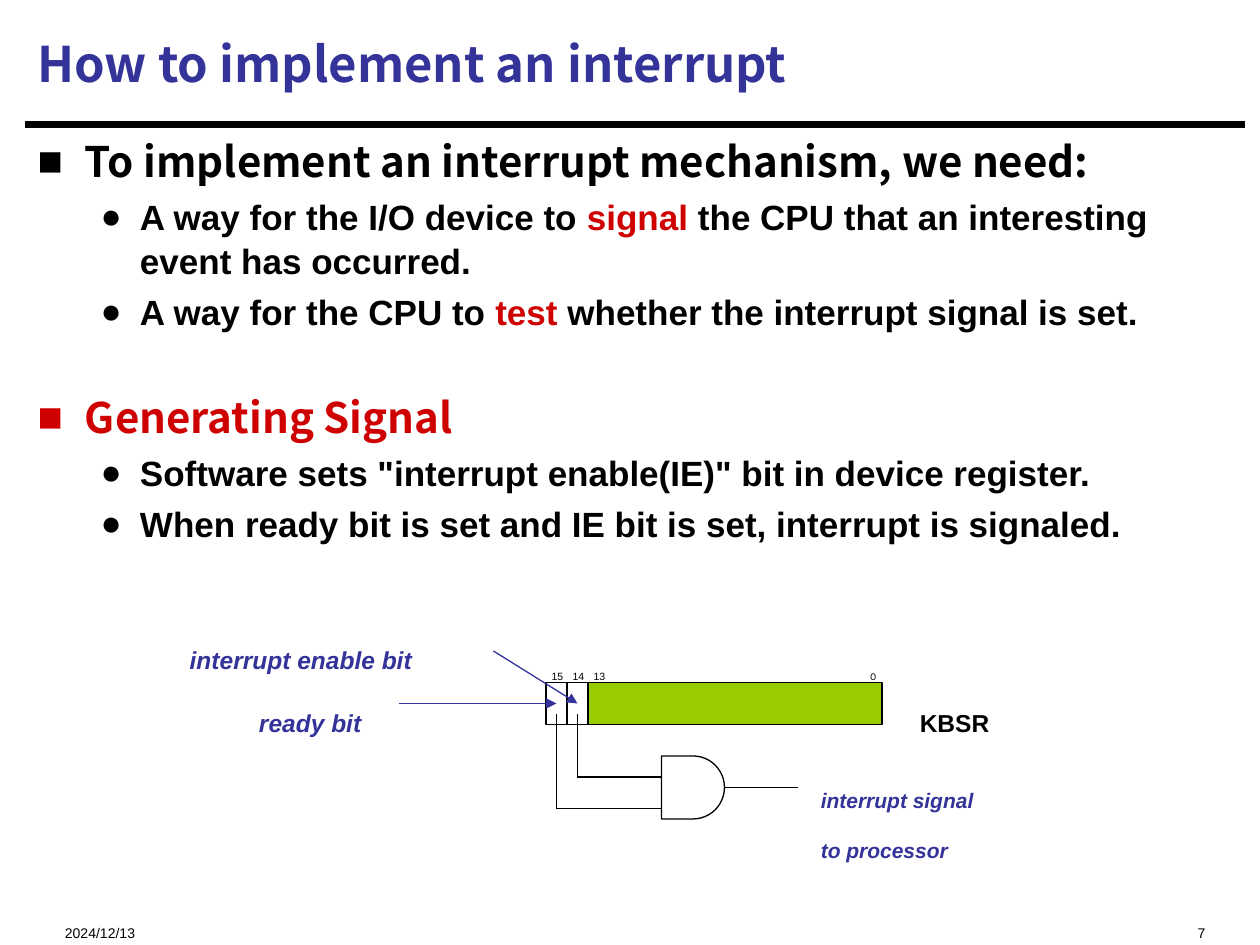
from lxml.etree import SubElement
from pptx import Presentation
from pptx.dml.color import RGBColor
from pptx.enum.shapes import MSO_CONNECTOR, MSO_SHAPE
from pptx.enum.text import MSO_ANCHOR, PP_ALIGN
from pptx.oxml.ns import qn
from pptx.util import Pt

BLACK = RGBColor(0x00, 0x00, 0x00)
WHITE = RGBColor(0xFF, 0xFF, 0xFF)
BLUE = RGBColor(0x33, 0x33, 0x99)
RED = RGBColor(0xCE, 0x00, 0x00)
GREEN = RGBColor(0x99, 0xCC, 0x00)
HEAD_FONT, TEXT_FONT = "Noto Sans CJK SC", "Arial"
LEFT, CENTER, RIGHT = PP_ALIGN.LEFT, PP_ALIGN.CENTER, PP_ALIGN.RIGHT

TITLE = "How to implement an interrupt"
# level, space before, runs of (text, colour)
BODY = [
    (0, 0, [("To implement an interrupt mechanism, we need:", BLACK)]),
    (1, 4, [("A way for the I/O device to ", BLACK), ("signal", RED),
            (" the CPU that an interesting event has occurred.", BLACK)]),
    (1, 4, [("A way for the CPU to ", BLACK), ("test", RED),
            (" whether the interrupt signal is set.", BLACK)]),
    (0, 37, [("Generating Signal", RED)]),
    (1, 4, [('Software sets "interrupt enable(IE)" bit in device register.', BLACK)]),
    (1, 4, [("When ready bit is set and IE bit is set, interrupt is signaled.", BLACK)]),
]
# font, size, line spacing, left margin, hanging indent, bullet
LEVELS = [
    (HEAD_FONT, 24, 0.9, 27, 27, "■"),
    (TEXT_FONT, 20, 1.05, 58.5, 22.5, "●"),
]

# Register KBSR: left, width, fill of each field
REG_TOP, REG_HEIGHT = 390, 24
FIELDS = [(312, 12, WHITE), (324, 12, WHITE), (336, 168, GREEN)]
# text, centre, font
BIT_NUMBERS = [("15", 318.5, TEXT_FONT), ("14", 330.5, TEXT_FONT),
               ("13", 342.5, TEXT_FONT), ("0", 499, "Karla")]
# text, box, size, colour, italic, alignment
LABELS = [
    ("KBSR", (504, 384.5, 83, 36), 14, BLACK, False, CENTER),
    ("ready bit", (120, 384, 114.5, 36), 14, BLUE, True, CENTER),
    ("interrupt enable bit", (56, 348, 232, 36), 14, BLUE, True, CENTER),
    ("interrupt signal \nto processor", (462, 432, 166, 55.5), 12, BLUE, True, LEFT),
]
FOOTER = [("2024/12/13", (30, 515, 180, 19.5), LEFT),
          ("7", (480, 515, 216, 19.5), RIGHT)]
GATE = (378, 432, 36, 36)
ARROWS = [((228, 402), (318, 402)), ((282, 372), (330, 402))]
WIRES = [
    [(330, 408), (330, 444), (378, 444)],
    [(318, 408), (318, 462), (378, 462)],
    [(414, 450), (456, 450)],
]

prs = Presentation()
prs.slide_width, prs.slide_height = Pt(720), Pt(540)
s = prs.slides.add_slide(prs.slide_layouts[6])


def add_run(p, text, font, size, color, bold=False, italic=False):
    r = p.add_run()
    r.text = text
    f = r.font
    f.name, f.size, f.bold, f.italic = font, Pt(size), bold, italic
    f.color.rgb = color
    # East Asian face, so that both scripts use the same font
    SubElement(r._r.get_or_add_rPr(), qn("a:ea"), typeface=font)


def add_box(box, wrap=True):
    tf = s.shapes.add_textbox(*map(Pt, box)).text_frame
    tf.word_wrap = wrap
    return tf


def add_label(text, box, size, color=BLACK, align=CENTER, font=TEXT_FONT,
              wrap=False, **style):
    p = add_box(box, wrap).paragraphs[0]
    p.alignment, p.line_spacing = align, 2.0
    for i, line in enumerate(text.split("\n")):
        if i:
            p.add_line_break()
        add_run(p, line, font, size, color, **style)


def set_bullet(p, char, margin, hanging):
    pPr = p._p.get_or_add_pPr()
    pPr.set("marL", str(Pt(margin)))
    pPr.set("indent", str(-Pt(hanging)))
    SubElement(pPr, qn("a:buFont"), typeface=TEXT_FONT)
    SubElement(pPr, qn("a:buChar"), char=char)


def add_outline(kind, box, fill=None):
    sp = s.shapes.add_shape(kind, *map(Pt, box))
    sp.shadow.inherit = False
    sp.line.color.rgb, sp.line.width = BLACK, Pt(0.75)
    if fill is None:
        sp.fill.background()
    else:
        sp.fill.solid()
        sp.fill.fore_color.rgb = fill


def add_line(start, end, color=BLACK, width=0.75, arrow=False):
    c = s.shapes.add_connector(MSO_CONNECTOR.STRAIGHT, *map(Pt, start + end))
    c.line.color.rgb, c.line.width = color, Pt(width)
    if arrow:
        SubElement(c.line._get_or_add_ln(), qn("a:tailEnd"), type="triangle")
    SubElement(c._element.spPr, qn("a:effectLst"))


add_line((14.4, 71.3), (711.4, 71.3), width=3.75)
for text, box, align in FOOTER:
    add_label(text, box, 8, align=align, wrap=True)

tf = add_box((14.4, 6, 696, 60))
tf.vertical_anchor = MSO_ANCHOR.MIDDLE
add_run(tf.paragraphs[0], TITLE, HEAD_FONT, 28, BLUE, bold=True)

tf = add_box((14.4, 77, 696, 431))
for i, (level, before, runs) in enumerate(BODY):
    p = tf.add_paragraph() if i else tf.paragraphs[0]
    font, size, spacing, margin, hanging, bullet = LEVELS[level]
    p.level, p.space_before, p.line_spacing = level, Pt(before), spacing
    set_bullet(p, bullet, margin, hanging)
    for text, color in runs:
        add_run(p, text, font, size, color, bold=True)

for left, width, fill in FIELDS:
    add_outline(MSO_SHAPE.RECTANGLE, (left, REG_TOP, width, REG_HEIGHT), fill)
for text, center, font in BIT_NUMBERS:
    add_label(text, (center - 12.5, REG_TOP - 18, 25, 19.5), 6, font=font)
for text, box, size, color, italic, align in LABELS:
    add_label(text, box, size, color, align, bold=True, italic=italic)

add_outline(MSO_SHAPE.FLOWCHART_DELAY, GATE)
for start, end in ARROWS:
    add_line(start, end, BLUE, arrow=True)
for wire in WIRES:
    for start, end in zip(wire, wire[1:]):
        add_line(start, end)

prs.save("out.pptx")
